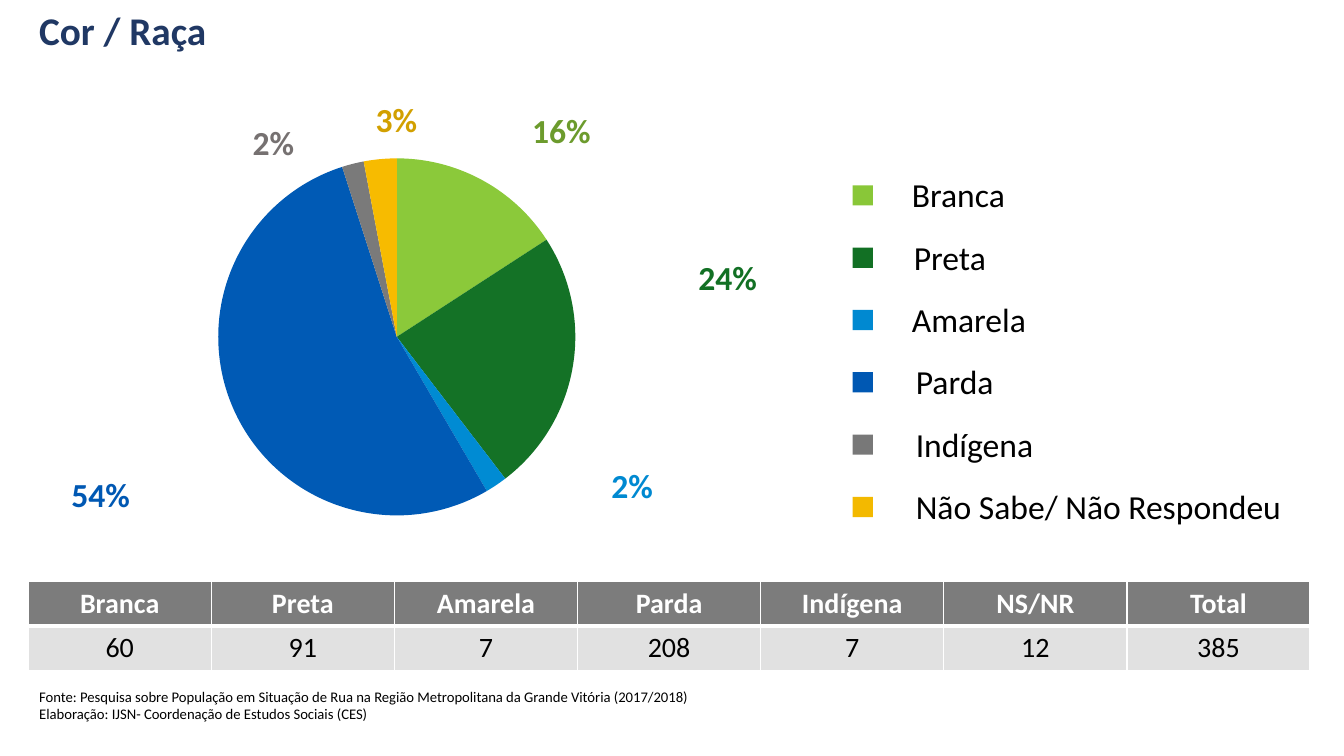
from typing import NamedTuple

from pptx import Presentation
from pptx.chart.data import CategoryChartData
from pptx.dml.color import RGBColor
from pptx.enum.chart import XL_CHART_TYPE
from pptx.enum.shapes import MSO_SHAPE
from pptx.enum.text import MSO_ANCHOR, MSO_AUTO_SIZE, PP_ALIGN
from pptx.oxml import parse_xml
from pptx.oxml.ns import nsdecls, qn
from pptx.util import Cm, Pt

FONT = "Calibri"
BLACK, WHITE = "000000", "FFFFFF"


class LegendEntry(NamedTuple):
    name: str
    color: str
    left: float
    width: float


class ShareLabel(NamedTuple):
    text: str
    color: str
    left: float
    top: float
    width: float


class Slice(NamedTuple):
    share: int
    color: str


SLICES = [
    Slice(16, "8BC93A"),
    Slice(24, "147226"),
    Slice(2, "008BD3"),
    Slice(54, "005AB5"),
    Slice(2, "7A7A7A"),
    Slice(3, "F7BB00"),
]
LEGEND = [
    LegendEntry("Branca", "89C738", 22.73, 2.87),
    LegendEntry("Preta", "127024", 22.78, 2.34),
    LegendEntry("Amarela", "0089D1", 22.73, 3.43),
    LegendEntry("Parda", "0058B3", 22.83, 2.49),
    LegendEntry("Indígena", "787878", 22.83, 3.51),
    LegendEntry("Não Sabe/ Não Respondeu", "F3B900", 22.83, 9.8),
]
SHARE_LABELS = [
    ShareLabel("3%", "D2A000", 9.22, 2.36, 1.57),
    ShareLabel("16%", "6C9B2D", 13.16, 2.64, 2.01),
    ShareLabel("24%", "127024", 17.35, 6.35, 2.01),
    ShareLabel("2%", "0089D1", 15.16, 11.58, 1.57),
    ShareLabel("54%", "0058B3", 1.55, 11.81, 2.01),
    ShareLabel("2%", "767171", 6.12, 2.95, 1.57),
]
COUNTS = [
    ("Branca", "60"),
    ("Preta", "91"),
    ("Amarela", "7"),
    ("Parda", "208"),
    ("Indígena", "7"),
    ("NS/NR", "12"),
    ("Total", "385"),
]
SOURCE_LINES = [
    "Fonte: Pesquisa sobre População em Situação de Rua na Região "
    "Metropolitana da Grande Vitória (2017/2018)",
    "Elaboração: IJSN- Coordenação de Estudos Sociais (CES)",
]


def rgb(color: str) -> RGBColor:
    return RGBColor.from_string(color)


def style(para, size: float, color: str, bold: bool = False) -> None:
    para.font.name = FONT
    para.font.size = Pt(size)
    para.font.bold = bold
    para.font.color.rgb = rgb(color)


def add_text(shapes, lines: list[str], left: float, top: float, width: float,
             height: float, size: float, color: str, bold: bool = False,
             anchor=MSO_ANCHOR.TOP, wrap: bool = True):
    box = shapes.add_textbox(Cm(left), Cm(top), Cm(width), Cm(height))
    frame = box.text_frame
    frame.word_wrap = wrap
    frame.auto_size = MSO_AUTO_SIZE.NONE if wrap else MSO_AUTO_SIZE.SHAPE_TO_FIT_TEXT
    frame.vertical_anchor = anchor
    frame.text = "\n".join(lines)
    for para in frame.paragraphs:
        style(para, size, color, bold)
    return box


def add_pie(page) -> None:
    data = CategoryChartData()
    data.categories = [str(number + 1) for number in range(len(SLICES))]
    data.add_series("Series 1", [piece.share for piece in SLICES])
    chart = page.shapes.add_chart(
        XL_CHART_TYPE.PIE, Cm(0), Cm(3.99), Cm(20), Cm(9), data).chart
    chart.has_legend = False
    chart.has_title = False
    chart.font.name = FONT
    chart.font.size = Pt(10)
    chart.font.color.rgb = rgb(BLACK)
    plot = chart.plots[0]
    plot.vary_by_categories = True
    for number, piece in enumerate(SLICES):
        fill = plot.series[0].points[number].format.fill
        fill.solid()
        fill.fore_color.rgb = rgb(piece.color)

    # Let the pie fill the whole chart frame
    area = chart._chartSpace.chart.plotArea
    for layout in area.findall(qn("c:layout")):
        area.remove(layout)
    area.insert(0, parse_xml(
        f'<c:layout {nsdecls("c")}><c:manualLayout><c:layoutTarget val="inner"/>'
        '<c:xMode val="edge"/><c:yMode val="edge"/><c:x val="0"/><c:y val="0"/>'
        '<c:w val="1"/><c:h val="1"/></c:manualLayout></c:layout>'))


def add_borders(cell, widths: dict[str, int]) -> None:
    properties = cell._tc.get_or_add_tcPr()
    for side, width in widths.items():
        properties.append(parse_xml(
            f'<a:ln{side} {nsdecls("a")} w="{Pt(width)}"><a:solidFill>'
            f'<a:srgbClr val="{WHITE}"/></a:solidFill></a:ln{side}>'))


def add_count_table(page) -> None:
    width, row_height = 32.31, 1.1
    table = page.shapes.add_table(
        2, len(COUNTS), Cm(0.71), Cm(14.66), Cm(width), Cm(2 * row_height)).table
    for row in table.rows:
        row.height = Cm(row_height)
    for column, texts in enumerate(COUNTS):
        table.columns[column].width = Cm(width / len(COUNTS))
        for row, text in enumerate(texts):
            header = row == 0
            cell = table.cell(row, column)
            add_borders(cell, {"L": 1, "R": 1, "T": 1 if header else 3,
                               "B": 3 if header else 1})
            cell.fill.solid()
            cell.fill.fore_color.rgb = rgb("7C7C7C" if header else "E1E1E1")
            cell.text = text
            para = cell.text_frame.paragraphs[0]
            para.alignment = PP_ALIGN.CENTER
            style(para, 20, WHITE if header else BLACK, header)


def add_legend_entry(page, entry: LegendEntry, top: float) -> None:
    group = page.shapes.add_group_shape()
    swatch = group.shapes.add_shape(
        MSO_SHAPE.RECTANGLE, Cm(21.49), Cm(top + 0.4), Cm(0.51), Cm(0.51))
    swatch.shadow.inherit = False
    swatch.fill.solid()
    swatch.fill.fore_color.rgb = rgb(entry.color)
    swatch.line.fill.background()
    add_text(group.shapes, [entry.name], entry.left, top, entry.width, 1.28,
             24, BLACK, wrap=False)


def main() -> None:
    deck = Presentation()
    deck.slide_width, deck.slide_height = Cm(33.87), Cm(19.05)
    page = deck.slides.add_slide(deck.slide_layouts[6])

    # Title
    title = add_text(page.shapes, ["Cor / Raça"], 0.74, 0.08, 32.31, 1.57, 28,
                     "203864", True, MSO_ANCHOR.MIDDLE)
    title.text_frame.paragraphs[0].line_spacing = 0.8

    # Chart and table
    add_pie(page)
    add_count_table(page)

    # Legend
    for number, entry in enumerate(LEGEND):
        add_legend_entry(page, entry, 4.27 + 1.57 * number)

    # Percentages around the pie
    for label in SHARE_LABELS:
        add_text(page.shapes, [label.text], label.left, label.top, label.width,
                 1.28, 24, label.color, True, wrap=False)

    # Source note
    add_text(page.shapes, SOURCE_LINES, 0.74, 16.87, 32.31, 1.47, 10.5, BLACK,
             anchor=MSO_ANCHOR.BOTTOM)

    deck.save("out.pptx")


if __name__ == "__main__":
    main()
